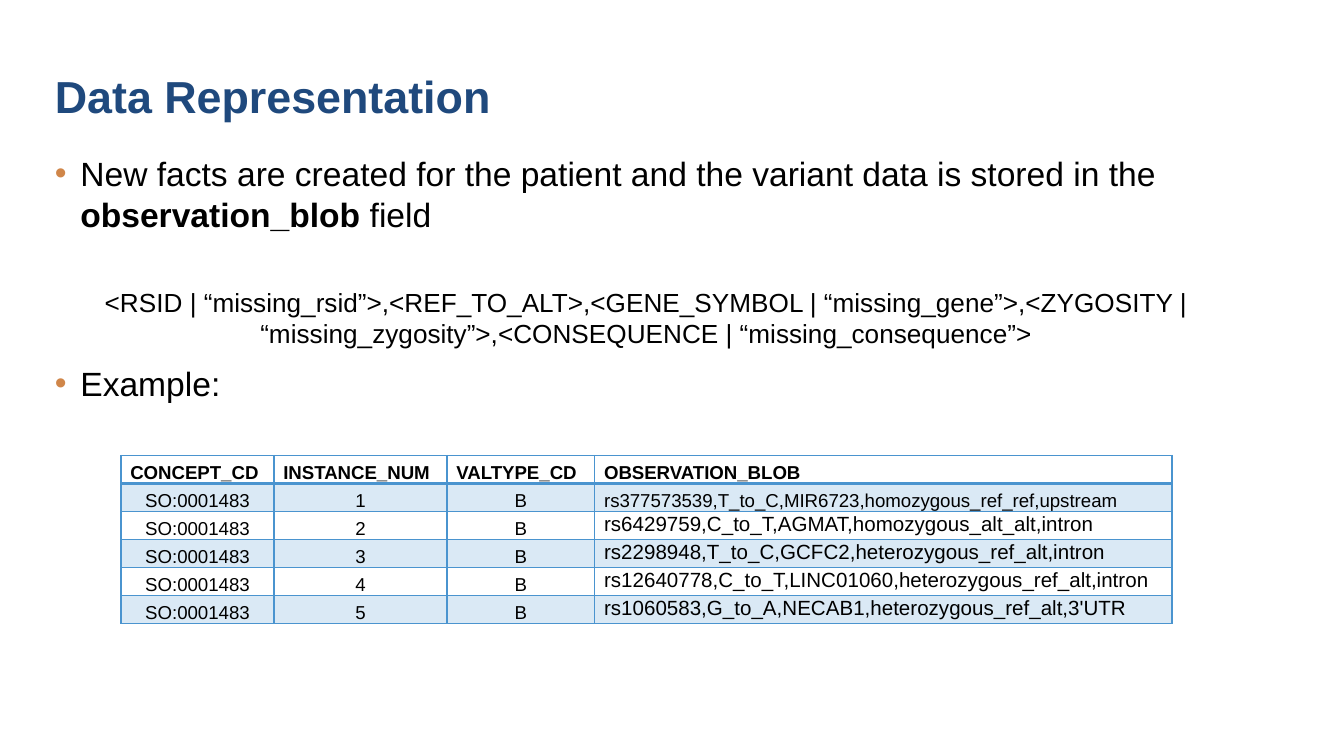
from lxml.etree import SubElement
from pptx import Presentation
from pptx.dml.color import RGBColor
from pptx.enum.text import MSO_ANCHOR, PP_ALIGN
from pptx.oxml import parse_xml
from pptx.oxml.ns import nsdecls, qn
from pptx.util import Inches, Pt

FONT = "Arial"
NAVY = RGBColor(0x1F, 0x49, 0x7D)
BLACK = RGBColor(0, 0, 0)
ORANGE = RGBColor(0xD0, 0x86, 0x49)
BLUE = RGBColor(0x4A, 0x94, 0xCF)

TITLE_BOX = (0.31, 0.02, 9, 0.94)
BODY_BOX = (0.31, 1.09, 9, 3.71)
TABLE_BOX = (0.9, 3.39, 7.82, 1.25)

COLUMN_SHARES = (1.14, 1.29, 1.1, 4.3)
HEADERS = ("CONCEPT_CD", "INSTANCE_NUM", "VALTYPE_CD", "OBSERVATION_BLOB")
OBSERVATIONS = (
    "rs377573539,T_to_C,MIR6723,homozygous_ref_ref,upstream",
    "rs6429759,C_to_T,AGMAT,homozygous_alt_alt,intron",
    "rs2298948,T_to_C,GCFC2,heterozygous_ref_alt,intron",
    "rs12640778,C_to_T,LINC01060,heterozygous_ref_alt,intron",
    "rs1060583,G_to_A,NECAB1,heterozygous_ref_alt,3'UTR",
)


def style_font(font, size, color=BLACK, bold=False):
    font.name = FONT
    font.size = Pt(size)
    font.color.rgb = color
    font.bold = bold


def add_text_frame(slide, box):
    text_frame = slide.shapes.add_textbox(*map(Inches, box)).text_frame
    text_frame.word_wrap = True
    return text_frame


def add_title(slide, box):
    text_frame = add_text_frame(slide, box)
    text_frame.vertical_anchor = MSO_ANCHOR.BOTTOM
    text_frame.text = "Data Representation"
    style_font(text_frame.paragraphs[0].runs[0].font, 24, NAVY, True)


def add_bullet(paragraph):
    properties = paragraph._p.get_or_add_pPr()
    indent = Inches(0.19)
    properties.set("marL", str(indent))
    properties.set("indent", str(-indent))
    bullet_color = SubElement(properties, qn("a:buClr"))
    SubElement(bullet_color, qn("a:srgbClr")).set("val", str(ORANGE))
    SubElement(properties, qn("a:buFont")).set("typeface", FONT)
    SubElement(properties, qn("a:buChar")).set("char", "•")


def add_body(slide, box):
    text_frame = add_text_frame(slide, box)
    facts = text_frame.paragraphs[0]
    blob_format = text_frame.add_paragraph()
    example = text_frame.add_paragraph()

    facts.text = "New facts are created for the patient and the variant data is stored in the "
    facts.add_run().text = "observation_blob"
    facts.add_run().text = " field"
    blob_format.text = (
        "<RSID | “missing_rsid”>,<REF_TO_ALT>,<GENE_SYMBOL | “missing_gene”>,"
        "<ZYGOSITY | “missing_zygosity”>,<CONSEQUENCE | “missing_consequence”>"
    )
    blob_format.alignment = PP_ALIGN.CENTER
    blob_format.space_before = Pt(28)
    example.text = "Example:"
    example.space_before = Pt(7.5)

    for paragraph, size in ((facts, 18), (blob_format, 14), (example, 18)):
        for run in paragraph.runs:
            style_font(run.font, size)
    facts.runs[1].font.bold = True
    for paragraph in (facts, example):
        add_bullet(paragraph)


def set_borders(cell, top, bottom):
    """Draw the four cell edges; top and bottom are widths in points."""
    properties = cell._tc.get_or_add_tcPr()
    edges = (("lnL", 1), ("lnR", 1), ("lnT", top), ("lnB", bottom))
    for position, (edge, width) in enumerate(edges):
        properties.insert(position, parse_xml(
            f'<a:{edge} {nsdecls("a")} w="{Pt(width)}"><a:solidFill>'
            f'<a:srgbClr val="{BLUE}"/></a:solidFill></a:{edge}>'
        ))


def fill_cell(cell, shaded):
    if not shaded:
        cell.fill.background()
        return
    cell.fill.solid()
    cell.fill.fore_color.rgb = BLUE
    color = cell._tc.tcPr.find(f"{qn('a:solidFill')}/{qn('a:srgbClr')}")
    SubElement(color, qn("a:alpha")).set("val", "20000")


def add_observation_table(slide, box):
    rows = [HEADERS] + [
        ("SO:0001483", str(number), "B", observation)
        for number, observation in enumerate(OBSERVATIONS, 1)
    ]
    left, top, width, height = map(Inches, box)
    table = slide.shapes.add_table(
        len(rows), len(HEADERS), left, top, width, height
    ).table
    table.first_row = table.horz_banding = False
    for column, share in zip(table.columns, COLUMN_SHARES):
        column.width = int(width * share / sum(COLUMN_SHARES))

    last_column = len(HEADERS) - 1
    for row_index, row in enumerate(rows):
        for column_index, text in enumerate(row):
            is_header = row_index == 0
            is_observation = column_index == last_column and not is_header
            is_large = is_observation and row_index > 1
            cell = table.cell(row_index, column_index)
            cell.margin_left = cell.margin_right = Inches(0.07)
            cell.margin_top = cell.margin_bottom = 0
            cell.vertical_anchor = MSO_ANCHOR.TOP if is_large else MSO_ANCHOR.BOTTOM
            cell.text = text
            paragraph = cell.text_frame.paragraphs[0]
            paragraph.line_spacing = 1.07
            if not is_header and not is_observation:
                paragraph.alignment = PP_ALIGN.CENTER
            style_font(paragraph.runs[0].font, 11 if is_large else 10, bold=is_header)
            fill_cell(cell, shaded=row_index % 2 == 1)
            set_borders(cell, top=2 if row_index == 1 else 1, bottom=2 if is_header else 1)


def main():
    presentation = Presentation()
    presentation.slide_width = Inches(10)
    presentation.slide_height = presentation.slide_width * 9 // 16
    slide = presentation.slides.add_slide(presentation.slide_layouts[6])
    add_title(slide, TITLE_BOX)
    add_body(slide, BODY_BOX)
    add_observation_table(slide, TABLE_BOX)
    presentation.save("out.pptx")


if __name__ == "__main__":
    main()
